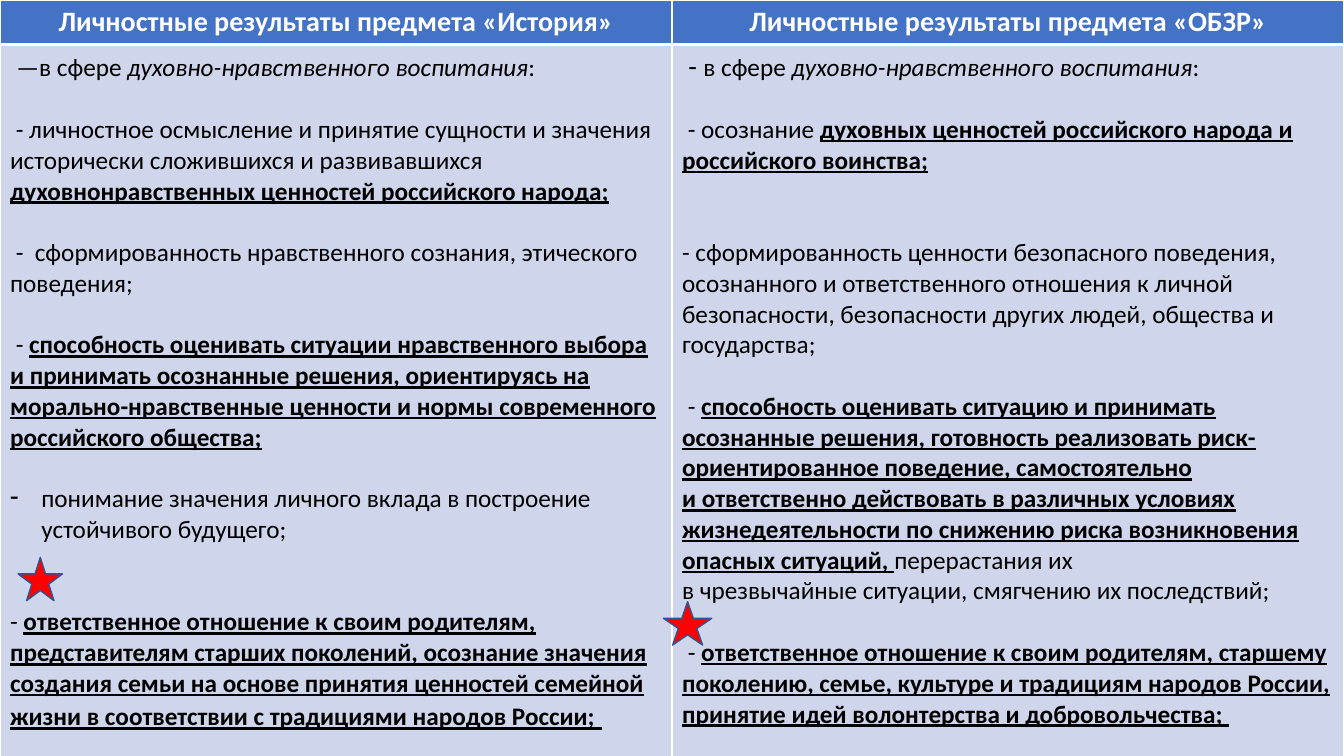
from lxml import etree
from pptx import Presentation
from pptx.dml.color import RGBColor
from pptx.enum.shapes import MSO_SHAPE
from pptx.enum.text import PP_ALIGN
from pptx.oxml.ns import qn
from pptx.util import Emu, Inches, Pt

STAR = MSO_SHAPE.STAR_5_POINT
CENTER = PP_ALIGN.CENTER

COLORS = {
    "background": "BDD7EE", "header": "4472C4", "body": "CFD5EA",
    "border": "FFFFFF", "header_text": "FFFFFF", "body_text": "000000",
    "star": "FF0000", "star_line": "325491",
}
FONT = "Calibri"
TITLE_SIZE, TEXT_SIZE = 20, 18
LINE_PITCH = 22  # points taken by one line of body text
HEADER_HEIGHT = 0.43
BULLET_INDENT = Inches(0.31)

# Each paragraph: empty lines above it, bulleted or not, runs of (text, style).
# Styles: b bold, u underlined, i italic, L larger.
HISTORY = [
    (0, False, [(" ", "L"), ("—в сфере ", ""),
                ("духовно-нравственного воспитания", "i"), (":", "")]),
    (1, False, [(" - личностное осмысление и принятие сущности и значения "
                 "исторически сложившихся и развивавшихся ", ""),
                ("духовнонравственных ценностей российского народа;", "bu")]),
    (1, False, [(" -  сформированность нравственного сознания, этического "
                 "поведения;", "")]),
    (1, False, [(" - ", ""),
                ("способность оценивать ситуации нравственного выбора и "
                 "принимать осознанные решения, ориентируясь на "
                 "морально-нравственные ценности и нормы современного "
                 "российского общества;", "bu")]),
    (1, True, [("понимание значения личного вклада в построение устойчивого "
                "будущего;", "")]),
    (2, False, [("- ", ""),
                ("ответственное отношение к своим родителям, представителям "
                 "старших поколений, осознание значения создания семьи на "
                 "основе принятия ценностей семейной жизни в соответствии с "
                 "традициями народов России;", "bu"), (" ", "buL")]),
]
SAFETY = [
    (0, False, [(" - ", "L"), ("в сфере ", ""),
                ("духовно-нравственного воспитания", "i"), (":", "")]),
    (1, False, [(" - осознание ", ""),
                ("духовных ценностей российского народа и российского "
                 "воинства;", "bu")]),
    (2, False, [("- сформированность ценности безопасного поведения, "
                 "осознанного и ответственного отношения к личной "
                 "безопасности, безопасности других людей, общества и "
                 "государства;", "")]),
    (1, False, [(" - ", ""),
                ("способность оценивать ситуацию и принимать осознанные "
                 "решения, готовность реализовать риск-ориентированное "
                 "поведение, самостоятельно\nи ответственно действовать в "
                 "различных условиях жизнедеятельности по снижению риска "
                 "возникновения опасных ситуаций, ", "bu"),
                ("перерастания их\nв чрезвычайные ситуации, смягчению их "
                 "последствий;", "")]),
    (1, False, [(" - ", ""),
                ("ответственное отношение к своим родителям, старшему "
                 "поколению, семье, культуре и традициям народов России, "
                 "принятие идей волонтерства и добровольчества; ", "bu")]),
]
SUBJECTS = [
    ("Личностные результаты предмета «История»", HISTORY),
    ("Личностные результаты предмета «ОБЗР»", SAFETY),
]
STARS = [(0.18, 5.53, 0.44, 0.43), (6.58, 5.97, 0.48, 0.43)]


def paint_cell(cell, fill, bottom_width):
    """Draw the cell's white borders, then its fill, in schema order."""
    properties = cell._tc.get_or_add_tcPr()
    for side, width in (("L", 1), ("R", 1), ("T", 1), ("B", bottom_width)):
        border = etree.SubElement(properties, qn(f"a:ln{side}"), w=str(Pt(width)))
        solid = etree.SubElement(border, qn("a:solidFill"))
        etree.SubElement(solid, qn("a:srgbClr"), val=COLORS["border"])
    cell.fill.solid()
    cell.fill.fore_color.rgb = RGBColor.from_string(COLORS[fill])


def add_text(paragraph, text, style, color):
    for index, line in enumerate(text.split("\n")):
        if index:
            paragraph.add_line_break()
        run = paragraph.add_run()
        run.text = line
        font = run.font
        font.name = FONT
        font.size = Pt(TITLE_SIZE if "L" in style else TEXT_SIZE)
        font.bold, font.italic, font.underline = (mark in style for mark in "biu")
        font.color.rgb = RGBColor.from_string(COLORS[color])


deck = Presentation()
deck.slide_width, deck.slide_height = Inches(13.33), Inches(7.5)
blank = deck.slide_layouts[6]
slide = deck.slides.add_slide(blank)
slide.background.fill.solid()
slide.background.fill.fore_color.rgb = RGBColor.from_string(COLORS["background"])

results = slide.shapes.add_table(
    2, len(SUBJECTS), 0, 0, deck.slide_width, deck.slide_height).table
results.rows[0].height = Inches(HEADER_HEIGHT)
results.rows[1].height = Emu(deck.slide_height - Inches(HEADER_HEIGHT))

for column, (title, outcomes) in enumerate(SUBJECTS):
    header, body = results.cell(0, column), results.cell(1, column)
    paint_cell(header, "header", 3)
    paint_cell(body, "body", 1)
    heading = header.text_frame.paragraphs[0]
    heading.alignment = CENTER
    add_text(heading, title, "bL", "header_text")

    for index, (empty_lines, bulleted, runs) in enumerate(outcomes):
        frame = body.text_frame
        outcome = frame.add_paragraph() if index else frame.paragraphs[0]
        outcome.space_before = Pt(empty_lines * LINE_PITCH)
        if bulleted:
            properties = outcome._p.get_or_add_pPr()
            properties.set("marL", str(BULLET_INDENT))
            properties.set("indent", str(-BULLET_INDENT))
            etree.SubElement(properties, qn("a:buFontTx"))
            etree.SubElement(properties, qn("a:buChar"), char="-")
        for text, style in runs:
            add_text(outcome, text, style, "body_text")

for place in STARS:
    star = slide.shapes.add_shape(STAR, *map(Inches, place))
    star.shadow.inherit = False
    star.fill.solid()
    star.fill.fore_color.rgb = RGBColor.from_string(COLORS["star"])
    star.line.color.rgb = RGBColor.from_string(COLORS["star_line"])
    star.line.width = Pt(1)

deck.save("out.pptx")
